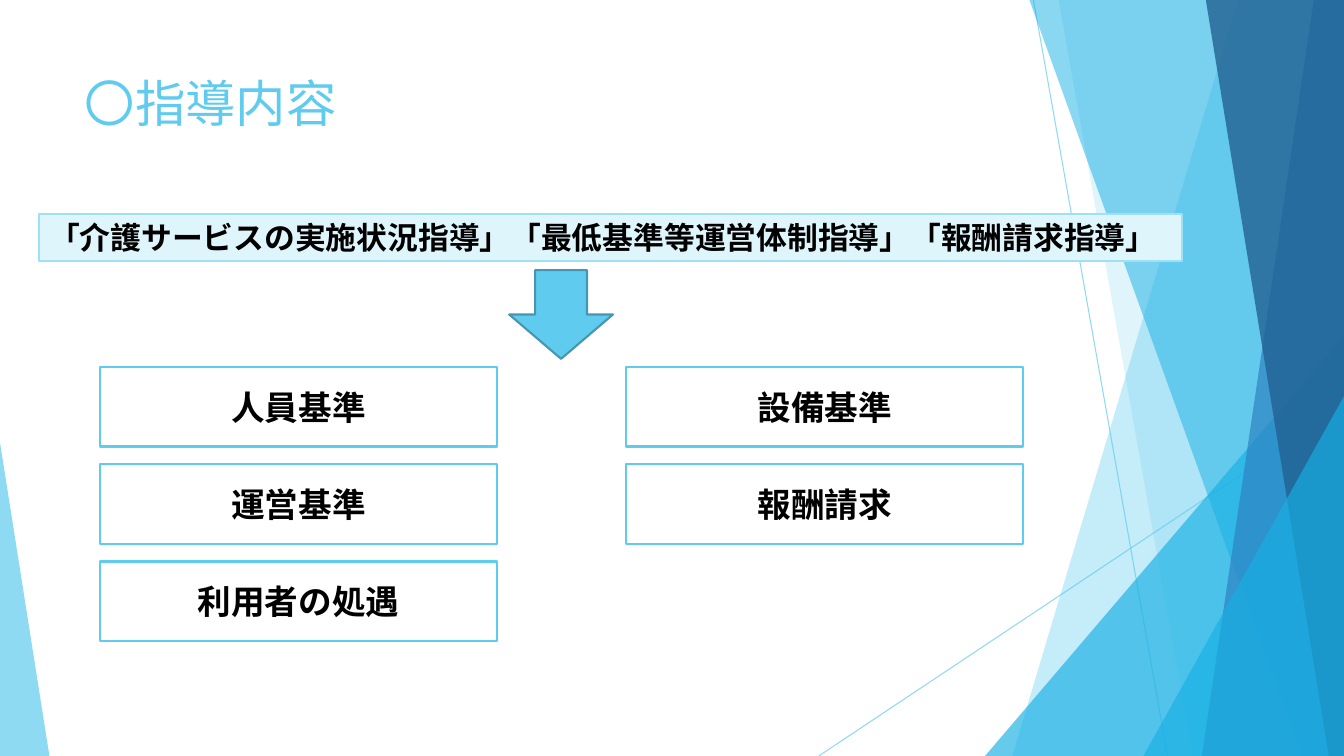
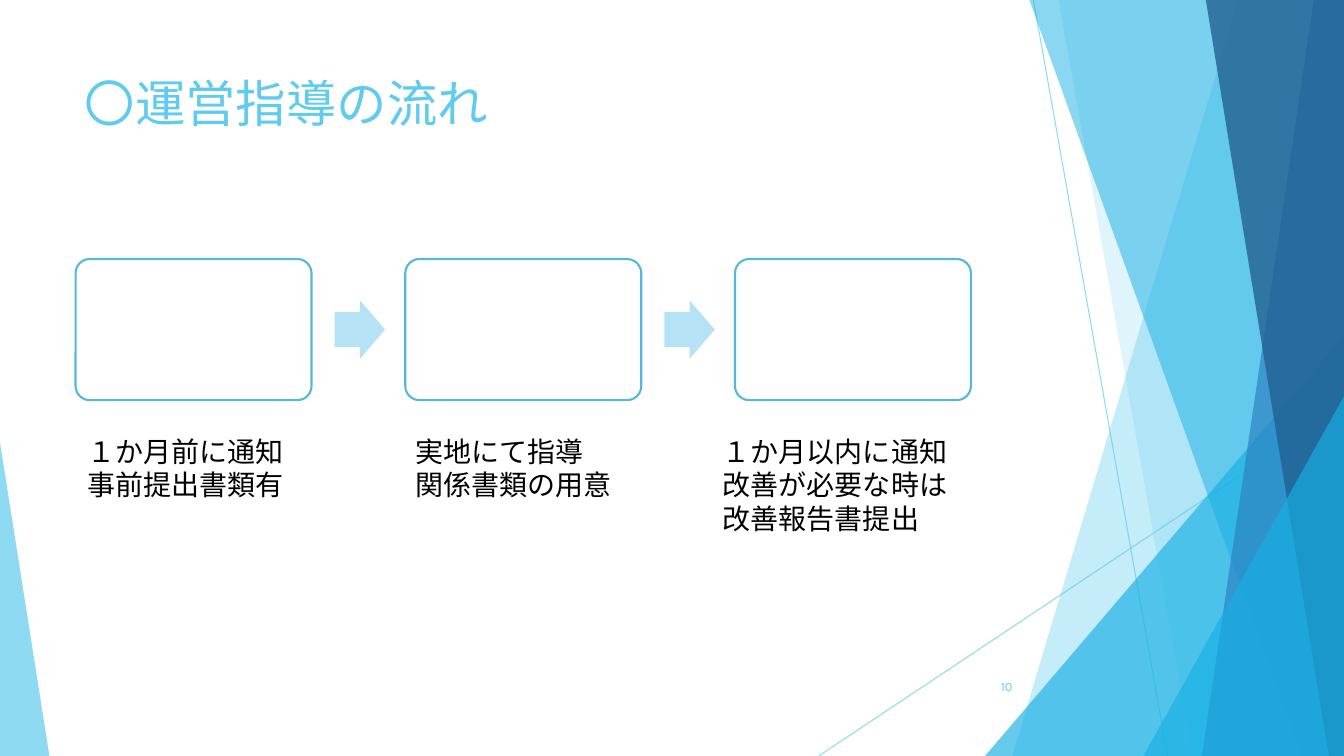
from dataclasses import dataclass

from lxml import etree
from pptx import Presentation
from pptx.dml.color import RGBColor
from pptx.enum.shapes import MSO_CONNECTOR, MSO_SHAPE
from pptx.enum.text import MSO_ANCHOR, MSO_AUTO_SIZE, PP_ALIGN
from pptx.oxml.ns import qn
from pptx.util import Inches, Pt

RECTANGLE = MSO_SHAPE.RECTANGLE
ROUNDED = MSO_SHAPE.ROUNDED_RECTANGLE
TRIANGLE = MSO_SHAPE.ISOSCELES_TRIANGLE
DOWN_ARROW = MSO_SHAPE.DOWN_ARROW
RIGHT_ARROW = MSO_SHAPE.RIGHT_ARROW
LEFT, CENTER, RIGHT = PP_ALIGN.LEFT, PP_ALIGN.CENTER, PP_ALIGN.RIGHT
TOP, MIDDLE = MSO_ANCHOR.TOP, MSO_ANCHOR.MIDDLE


@dataclass(frozen=True)
class Theme:
    font: str = "Karla"
    sky: str = "5FCBEF"
    azure: str = "17B0E4"
    blue: str = "2E83C3"
    navy: str = "226292"
    white: str = "FFFFFF"
    black: str = "000000"
    banner_fill: str = "DFF5FC"
    banner_line: str = "9FE0F5"
    arrow_line: str = "4696B1"
    step_line: str = "56B8D9"
    step_arrow: str = "B6E2F6"
    title_size: int = 36
    card_size: int = 24
    banner_size: int = 22
    note_size: int = 20
    number_size: int = 9
    outline: float = 1.5
    hairline: float = 0.75


THEME = Theme()
WIDTH, HEIGHT = 13.33, 7.5

# Backdrop, back to front: bands run from an edge (top x, bottom x) to the
# right side; triangles have a box and the position of their apex.
HAIRLINES = [(10.25, 0, 11.58, HEIGHT), (WIDTH, 4.03, 8.12, HEIGHT)]
BACKDROP = [
    ("band", (12.28, 10.04), THEME.sky, 36),
    ("band", (10.5, 11.83), THEME.sky, 20),
    ("triangle", (9.77, 3.33, 3.56, 4.17, 1), THEME.azure, 66),
    ("band", (10.21, 12.91), THEME.azure, 50),
    ("band", (13.03, 11.92), THEME.blue, 70),
    ("band", (11.96, 13.18), THEME.navy, 80),
    ("triangle", (11.34, 3.93, 1.99, 3.57, 1), THEME.azure, 66),
    ("triangle", (0, 4.39, 0.49, 3.11, 0), THEME.sky, 70),
]

CONTENT_TITLE = "〇指導内容"
BANNER = "「介護サービスの実施状況指導」「最低基準等運営体制指導」「報酬請求指導」"
CARD_COLUMNS = [["人員基準", "運営基準", "利用者の処遇"], ["設備基準", "報酬請求"]]

FLOW_TITLE = "〇運営指導の流れ"
PAGE_NUMBER = "10"
STEP_NOTES = [  # left, width, height, lines
    (0.77, 2.32, 0.77, ["１か月前に通知", "事前提出書類有"]),
    (4.02, 2.32, 0.77, ["実地にて指導", "関係書類の用意"]),
    (7.07, 2.56, 1.11, ["１か月以内に通知", "改善が必要な時は改善報告書提出"]),
]


def inches(*values):
    return [Inches(value) for value in values]


def set_alpha(color_format_element, percent):
    color = next(color_format_element.iter(qn("a:srgbClr")))
    etree.SubElement(color, qn("a:alpha")).set("val", str(percent * 1000))


def paint(shape, fill, line=None, alpha=None):
    shape.shadow.inherit = False
    shape.fill.solid()
    shape.fill.fore_color.rgb = RGBColor.from_string(fill)
    if alpha is not None:
        set_alpha(shape.element.spPr, alpha)
    if line:
        shape.line.color.rgb = RGBColor.from_string(line)
        shape.line.width = Pt(THEME.outline)
    else:
        shape.line.fill.background()


def write(shape, lines, size, color=THEME.black, bold=False, align=LEFT, anchor=TOP):
    frame = shape.text_frame
    frame.text = "\n".join(lines)
    frame_format = {"word_wrap": True, "auto_size": MSO_AUTO_SIZE.NONE,
                    "vertical_anchor": anchor}
    for name, value in frame_format.items():
        setattr(frame, name, value)
    font_format = {"name": THEME.font, "size": Pt(size), "bold": bold}
    for paragraph in frame.paragraphs:
        paragraph.alignment = align
        for run in paragraph.runs:
            for name, value in font_format.items():
                setattr(run.font, name, value)
            run.font.color.rgb = RGBColor.from_string(color)


def add_preset(slide, kind, box, fill, line=None, alpha=None, adjustments=()):
    shape = slide.shapes.add_shape(kind, *inches(*box))
    for index, value in enumerate(adjustments):
        shape.adjustments[index] = value
    paint(shape, fill, line, alpha)
    return shape


def add_text(slide, box, lines, size, **style):
    write(slide.shapes.add_textbox(*inches(*box)), lines, size, **style)


def add_hairline(slide, ends):
    connector = slide.shapes.add_connector(MSO_CONNECTOR.STRAIGHT, *inches(*ends))
    connector.line.color.rgb = RGBColor.from_string(THEME.sky)
    connector.line.width = Pt(THEME.hairline)
    properties = connector.element.spPr
    set_alpha(properties, 70)
    etree.SubElement(properties, qn("a:effectLst"))
    return connector


def add_band(slide, edge, fill, alpha):
    top_x, bottom_x = edge
    corners = [(WIDTH, 0), (WIDTH, HEIGHT), (bottom_x, HEIGHT)]
    builder = slide.shapes.build_freeform(Inches(top_x), 0)
    builder.add_line_segments([inches(*corner) for corner in corners], close=True)
    shape = builder.convert_to_shape()
    paint(shape, fill, alpha=alpha)
    return shape


def add_backdrop(slide, layout):
    """Draw the backdrop on a slide, then move it to the layout all slides share."""
    shapes = [add_hairline(slide, ends) for ends in HAIRLINES]
    for kind, geometry, fill, alpha in BACKDROP:
        if kind == "band":
            shapes.append(add_band(slide, geometry, fill, alpha))
        else:
            *box, apex = geometry
            shapes.append(add_preset(slide, TRIANGLE, box, fill,
                                     alpha=alpha, adjustments=[apex]))
    for shape in shapes:
        layout.shapes.element.append(shape.element)


def add_titled_slide(presentation, layout, text):
    slide = presentation.slides.add_slide(layout)
    title = slide.shapes.title
    title.left, title.top, title.width, title.height = inches(0.74, 0.67, 9.4, 1.44)
    write(title, [text], THEME.title_size, THEME.sky)
    return slide


def build_content_slide(slide):
    banner = add_preset(slide, RECTANGLE, (0.39, 2.12, 11.33, 0.47),
                        THEME.banner_fill, THEME.banner_line)
    write(banner, [BANNER], THEME.banner_size, bold=True, anchor=MIDDLE)
    add_preset(slide, DOWN_ARROW, (5.05, 2.68, 1.03, 0.88), THEME.sky, THEME.arrow_line)

    left, top, width, height = 0.99, 3.64, 3.94, 0.79
    column_pitch, row_pitch = 5.22, 0.965
    for column, labels in enumerate(CARD_COLUMNS):
        for row, label in enumerate(labels):
            box = (left + column * column_pitch, top + row * row_pitch, width, height)
            card = add_preset(slide, RECTANGLE, box, THEME.white, THEME.sky)
            write(card, [label], THEME.card_size, bold=True, align=CENTER, anchor=MIDDLE)


def build_flow_slide(slide):
    left, top, width, height, pitch = 0.75, 2.57, 2.34, 1.4, 3.27
    arrow_width, arrow_height, arrow_gap = 0.5, 0.58, 0.23
    for index, (note_left, note_width, note_height, lines) in enumerate(STEP_NOTES):
        step_left = left + index * pitch
        add_preset(slide, ROUNDED, (step_left, top, width, height),
                   THEME.white, THEME.step_line, adjustments=[0.1])
        if index < len(STEP_NOTES) - 1:
            arrow_box = (step_left + width + arrow_gap,
                         top + (height - arrow_height) / 2, arrow_width, arrow_height)
            add_preset(slide, RIGHT_ARROW, arrow_box, THEME.step_arrow,
                       adjustments=[0.6, 0.5])
        add_text(slide, (note_left, 4.26, note_width, note_height), lines,
                 THEME.note_size)
    add_text(slide, (9.39, 6.61, 0.75, 0.4), [PAGE_NUMBER], THEME.number_size,
             color=THEME.sky, align=RIGHT, anchor=MIDDLE)


def main():
    presentation = Presentation()
    presentation.slide_width, presentation.slide_height = inches(WIDTH, HEIGHT)
    layout = presentation.slide_layouts.get_by_name("Title Only")
    content_slide = add_titled_slide(presentation, layout, CONTENT_TITLE)
    add_backdrop(content_slide, layout)
    build_content_slide(content_slide)
    build_flow_slide(add_titled_slide(presentation, layout, FLOW_TITLE))
    presentation.save("out.pptx")


if __name__ == "__main__":
    main()
